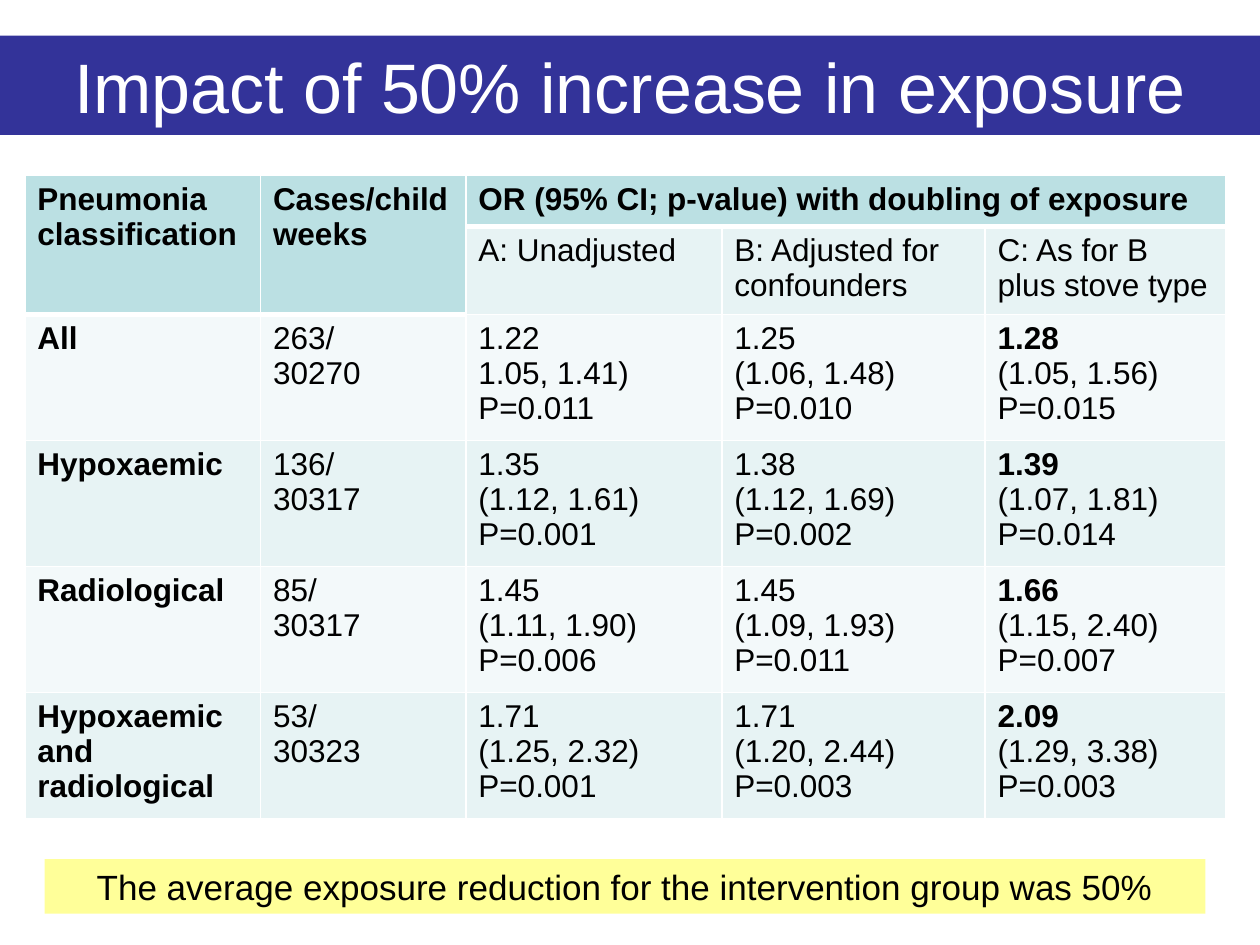
from lxml import etree
from pptx import Presentation
from pptx.dml.color import RGBColor
from pptx.enum.shapes import MSO_SHAPE
from pptx.enum.text import MSO_ANCHOR, PP_ALIGN
from pptx.oxml.ns import qn
from pptx.util import Cm, Pt

RECTANGLE = MSO_SHAPE.RECTANGLE
TOP, MIDDLE = MSO_ANCHOR.TOP, MSO_ANCHOR.MIDDLE
LEFT, CENTER = PP_ALIGN.LEFT, PP_ALIGN.CENTER

FONT = "Arial"
WHITE, BLACK = "FFFFFF", "000000"
HEADER_FILL, DARK_BAND, LIGHT_BAND = "BBE0E3", "E7F3F4", "F3F9FA"
THIN, THICK = 1, 3

COLUMN_WIDTHS = [4.75, 4.14, 5.16, 5.31, 4.85]
ROW_HEIGHTS = [1.02, 1.78] + [2.54] * 4
HEADINGS = [
    ["Pneumonia classification", "Cases/child weeks",
     "OR (95% CI; p-value) with doubling of exposure", "", ""],
    ["", "", "A: Unadjusted", "B: Adjusted for confounders",
     "C: As for B plus stove type"],
]
RESULTS = [
    ["All", "263/\n30270", "1.22\n1.05, 1.41)\nP=0.011",
     "1.25\n(1.06, 1.48)\nP=0.010", "1.28\n(1.05, 1.56)\nP=0.015"],
    ["Hypoxaemic", "136/\n30317", "1.35\n(1.12, 1.61)\nP=0.001",
     "1.38\n(1.12, 1.69)\nP=0.002", "1.39\n(1.07, 1.81)\nP=0.014"],
    ["Radiological", "85/\n30317", "1.45\n(1.11, 1.90)\nP=0.006",
     "1.45\n(1.09, 1.93)\nP=0.011", "1.66\n(1.15, 2.40)\nP=0.007"],
    ["Hypoxaemic and radiological", "53/\n30323",
     "1.71\n(1.25, 2.32)\nP=0.001", "1.71\n(1.20, 2.44)\nP=0.003",
     "2.09\n(1.29, 3.38)\nP=0.003"],
]


def color(hex_value):
    return RGBColor.from_string(hex_value)


def write_text(frame, text, size=18, ink=BLACK, align=LEFT, bold_lines=0):
    frame.word_wrap = True
    for index, line in enumerate(text.split("\n")):
        para = frame.paragraphs[0] if index == 0 else frame.add_paragraph()
        para.alignment = align
        span = para.add_run()
        span.text = line
        span.font.name = FONT
        span.font.size = Pt(size)
        span.font.bold = index < bold_lines
        span.font.color.rgb = color(ink)


def add_banner(page, text, left, top, width, height, fill, anchor, **style):
    box = page.shapes.add_shape(
        RECTANGLE, Cm(left), Cm(top), Cm(width), Cm(height))
    box.shadow.inherit = False
    box.fill.solid()
    box.fill.fore_color.rgb = color(fill)
    box.line.fill.background()
    box.text_frame.vertical_anchor = anchor
    write_text(box.text_frame, text, align=CENTER, **style)


def set_borders(cell, top, bottom):
    properties = cell._tc.get_or_add_tcPr()
    widths = {"a:lnL": THIN, "a:lnR": THIN, "a:lnT": top, "a:lnB": bottom}
    for tag, width in widths.items():
        line = etree.SubElement(properties, qn(tag), w=str(Pt(width)))
        fill = etree.SubElement(line, qn("a:solidFill"))
        etree.SubElement(fill, qn("a:srgbClr"), val=WHITE)


def is_header(row, column):
    return row == 0 or (row == 1 and column < 2)


def cell_fill(row, column):
    if is_header(row, column):
        return HEADER_FILL
    return DARK_BAND if row % 2 else LIGHT_BAND


def edge_width(row, column):
    above = row >= 0 and is_header(row, column)
    below = is_header(row + 1, column)
    return THICK if above and not below else THIN


def add_results_table(page, left, top):
    rows = HEADINGS + RESULTS
    table = page.shapes.add_table(
        len(rows), len(COLUMN_WIDTHS), Cm(left), Cm(top),
        Cm(sum(COLUMN_WIDTHS)), Cm(sum(ROW_HEIGHTS))).table
    for column, width in zip(table.columns, COLUMN_WIDTHS):
        column.width = Cm(width)
    for row, height in zip(table.rows, ROW_HEIGHTS):
        row.height = Cm(height)
    for first, last in [((0, 0), (1, 0)), ((0, 1), (1, 1)), ((0, 2), (0, 4))]:
        table.cell(*first).merge(table.cell(*last))
    for r, texts in enumerate(rows):
        for c, text in enumerate(texts):
            cell = table.cell(r, c)
            set_borders(cell, edge_width(r - 1, c), edge_width(r, c))
            cell.fill.solid()
            cell.fill.fore_color.rgb = color(cell_fill(r, c))
            if text:
                bold = is_header(r, c) or (r > 1 and c in (0, 4))
                write_text(cell.text_frame, text, bold_lines=int(bold))


def main():
    deck = Presentation()
    deck.slide_width, deck.slide_height = Cm(25.4), Cm(19.05)
    page = deck.slides.add_slide(deck.slide_layouts[6])
    add_banner(page, "Impact of 50% increase in exposure",
               0, 0.72, 25.4, 2, "333399", MIDDLE, size=40, ink=WHITE)
    add_banner(page, "The average exposure reduction for the intervention "
               "group was 50%", 0.9, 17.32, 23.4, 1.1, "FFFF99", TOP, size=20)
    add_results_table(page, 0.5, 3.54)
    deck.save("out.pptx")


if __name__ == "__main__":
    main()
